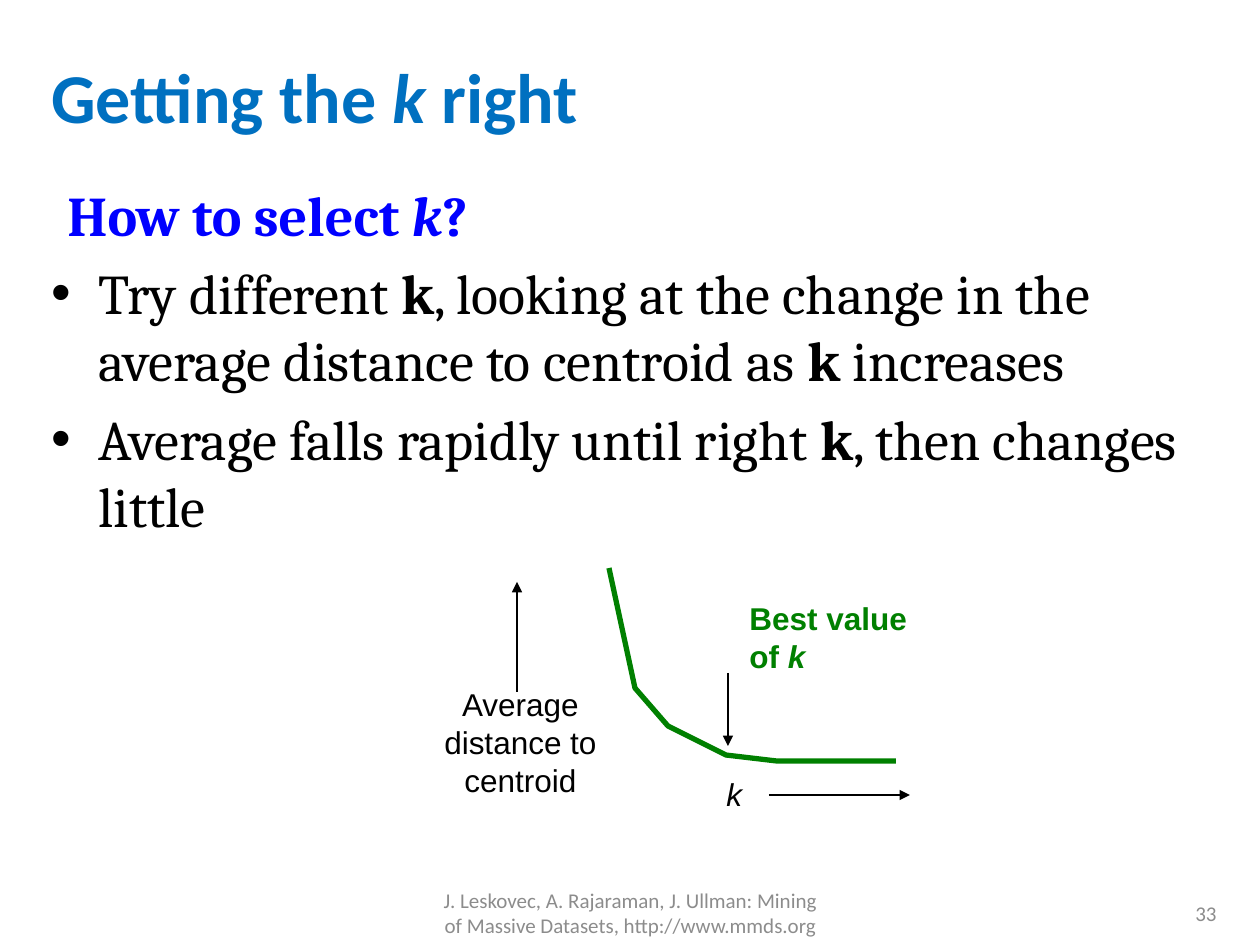
from dataclasses import dataclass

from lxml import etree
from pptx import Presentation
from pptx.dml.color import RGBColor
from pptx.enum.shapes import MSO_CONNECTOR
from pptx.enum.text import MSO_ANCHOR, PP_ALIGN
from pptx.oxml.ns import qn
from pptx.util import Pt

STRAIGHT = MSO_CONNECTOR.STRAIGHT
TOP, MIDDLE = MSO_ANCHOR.TOP, MSO_ANCHOR.MIDDLE
LEFT, CENTER, RIGHT = PP_ALIGN.LEFT, PP_ALIGN.CENTER, PP_ALIGN.RIGHT
EMU_PER_PX = 914400 / 126
BLANK_LAYOUT = 6


@dataclass(frozen=True)
class Style:
    font: str
    size: int
    color: str
    bold: bool = False


@dataclass(frozen=True)
class Theme:
    title: Style = Style("Calibri", 40, "0070C0", True)
    question: Style = Style("Cambria", 32, "0000FF", True)
    body: Style = Style("Cambria", 32, "000000")
    label: Style = Style("Arial", 18, "000000")
    callout: Style = Style("Arial", 18, "008000", True)
    footer: Style = Style("Calibri", 12, "8C8C8C")
    arrow_color: str = "000000"
    arrow_width: float = 0.75
    curve_color: str = "008000"
    curve_width: float = 3


THEME = Theme()


def px(length):
    return round(length * EMU_PER_PX)


def add_text_box(slide, box, anchor=TOP, wrap=True):
    shape = slide.shapes.add_textbox(*map(px, box))
    frame = shape.text_frame
    frame.word_wrap = wrap
    frame.vertical_anchor = anchor
    return frame


def write(paragraph, text, style, align=LEFT):
    """Set the text; *word* marks italics and _word_ marks bold."""
    marked = text.replace("*", "|*|").replace("_", "|_|")
    italic, bold = False, style.bold
    paragraph.alignment = align
    for part in filter(None, marked.split("|")):
        if part == "*":
            italic = not italic
        elif part == "_":
            bold = not bold
        else:
            run = paragraph.add_run()
            run.text = part
            run.font.name = style.font
            run.font.size = Pt(style.size)
            run.font.color.rgb = RGBColor.from_string(style.color)
            run.font.bold = bold
            run.font.italic = italic


def write_lines(frame, lines, style, align=LEFT):
    for index, line in enumerate(lines):
        paragraph = frame.add_paragraph() if index else frame.paragraphs[0]
        write(paragraph, line, style, align)


def set_indent(paragraph, margin, first_line, bullet=None):
    properties = paragraph._p.get_or_add_pPr()
    properties.set("marL", str(px(margin)))
    properties.set("indent", str(px(first_line)))
    if bullet:
        etree.SubElement(properties, qn("a:buFont"), typeface="Arial")
        etree.SubElement(properties, qn("a:buChar"), char=bullet)
    else:
        etree.SubElement(properties, qn("a:buNone"))


def add_arrow(slide, start, end):
    arrow = slide.shapes.add_connector(STRAIGHT, *map(px, start + end))
    arrow.line.color.rgb = RGBColor.from_string(THEME.arrow_color)
    arrow.line.width = Pt(THEME.arrow_width)
    etree.SubElement(arrow.line._get_or_add_ln(), qn("a:tailEnd"), type="triangle")
    etree.SubElement(arrow._element.spPr, qn("a:effectLst"))


def add_title(slide, box):
    write(add_text_box(slide, box, MIDDLE).paragraphs[0], "Getting the *k* right", THEME.title)


def add_body(slide, box):
    frame = add_text_box(slide, box)
    write(frame.paragraphs[0], "How to select *k*?", THEME.question)
    bullets = (
        "Try different _k_, looking at the change in the average distance "
        "to centroid as _k_ increases",
        "Average falls rapidly until right _k_, then changes little",
    )
    for text in bullets:
        write(frame.add_paragraph(), text, THEME.body)
    for index, paragraph in enumerate(frame.paragraphs):
        paragraph.space_before = Pt(6.4)
        if index:
            set_indent(paragraph, 47, -47, "•")
        else:
            set_indent(paragraph, 16, 0)


def add_elbow_diagram(slide, box):
    left, top = box[:2]

    def at(x, y):
        return left + x, top + y

    # Axis labels and arrows
    k_label = add_text_box(slide, at(283, 201) + (42, 50), wrap=False)
    write_lines(k_label, ["*k*"], THEME.label)
    distance_label = add_text_box(slide, at(0, 111) + (179, 127), wrap=False)
    write_lines(distance_label, ["Average", "distance to", "centroid"], THEME.label, CENTER)
    add_arrow(slide, at(86, 124), at(86, 14))
    add_arrow(slide, at(338, 227), at(479, 227))

    # Callout for the best value
    callout = add_text_box(slide, at(306, 25) + (184, 89), wrap=False)
    write_lines(callout, ["Best value", "of *k*"], THEME.callout)
    add_arrow(slide, at(297, 105), at(297, 178))

    # Curve of average distance
    offsets = [(178, 0), (204, 120), (237, 158), (295, 187), (346, 193), (422, 193), (465, 193)]
    points = [at(*offset) for offset in offsets]
    builder = slide.shapes.build_freeform(*points[0], scale=EMU_PER_PX)
    builder.add_line_segments(points[1:], close=False)
    curve = builder.convert_to_shape()
    curve.shadow.inherit = False
    curve.fill.background()
    curve.line.color.rgb = RGBColor.from_string(THEME.curve_color)
    curve.line.width = Pt(THEME.curve_width)


def add_footer(slide, box):
    left, top, width, height = box
    source = add_text_box(slide, (left, top, 399, height), MIDDLE)
    write(
        source.paragraphs[0],
        "J. Leskovec, A. Rajaraman, J. Ullman: Mining of Massive Datasets, http://www.mmds.org",
        THEME.footer,
        CENTER,
    )
    number_width = 294
    number_box = (left + width - number_width, top, number_width, height)
    number = add_text_box(slide, number_box, MIDDLE)
    write(number.paragraphs[0], "33", THEME.footer, RIGHT)


def main():
    presentation = Presentation()
    presentation.slide_width, presentation.slide_height = px(1260), px(945)
    slide = presentation.slides.add_slide(presentation.slide_layouts[BLANK_LAYOUT])
    add_title(slide, (39, 40, 1192, 111))
    add_body(slide, (39, 174, 1192, 703))
    add_elbow_diagram(slide, (431, 568, 490, 251))
    add_footer(slide, (431, 888, 798, 50))
    presentation.save("out.pptx")


if __name__ == "__main__":
    main()
